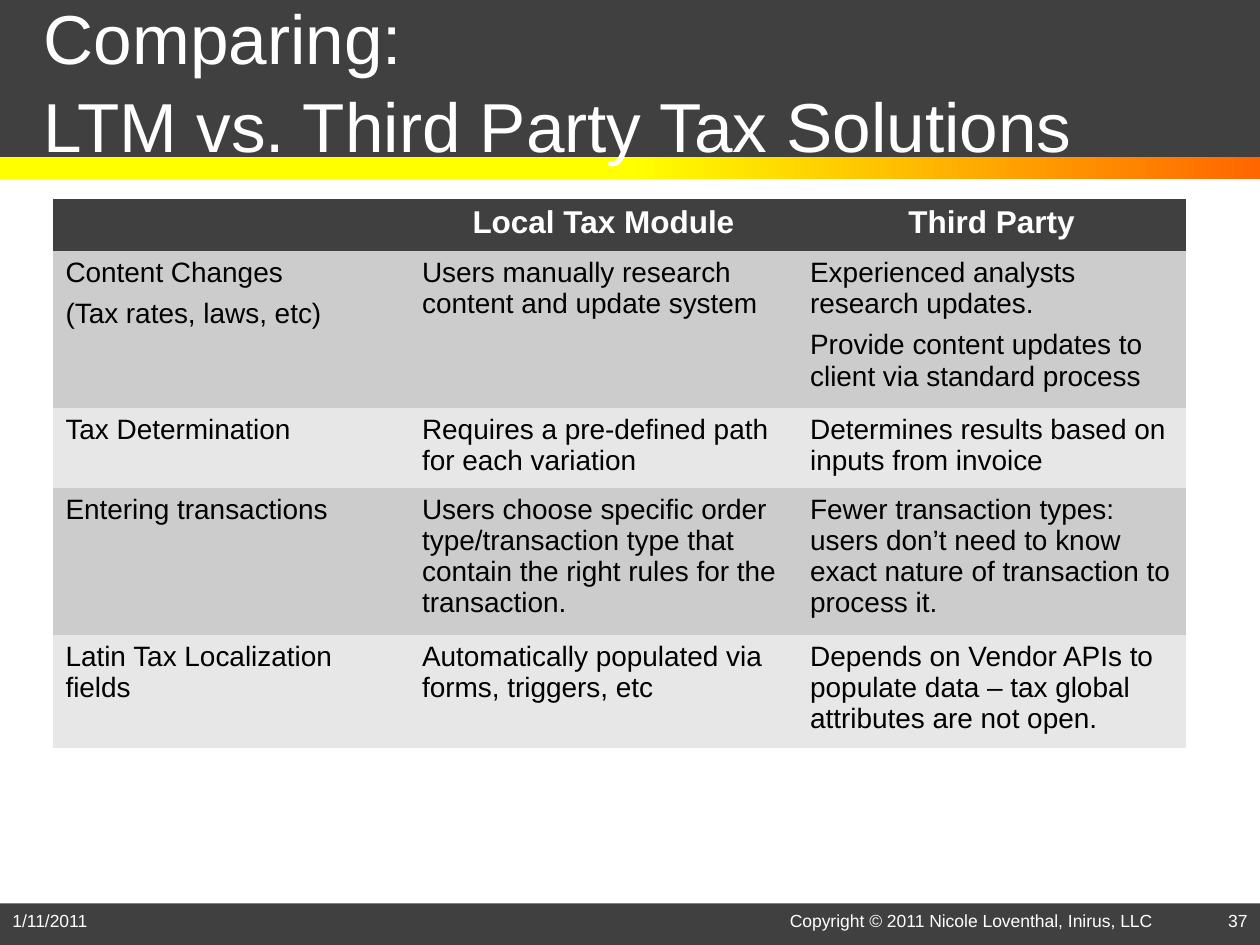
from dataclasses import dataclass

from pptx import Presentation
from pptx.dml.color import RGBColor
from pptx.enum import shapes, text
from pptx.util import Inches, Pt


@dataclass(frozen=True)
class Theme:
    font: str = "Arial"
    dark: RGBColor = RGBColor(0x40, 0x40, 0x40)
    white: RGBColor = RGBColor(0xFF, 0xFF, 0xFF)
    black: RGBColor = RGBColor(0, 0, 0)
    yellow: RGBColor = RGBColor(0xFF, 0xFF, 0)
    orange: RGBColor = RGBColor(0xFF, 0x66, 0)
    bands: tuple = (RGBColor(0xCC, 0xCC, 0xCC), RGBColor(0xE7, 0xE7, 0xE7))
    title_size: float = 39.6
    header_size: float = 18
    body_size: float = 16
    footer_size: float = 10


theme = Theme()
LEFT, CENTER, RIGHT = text.PP_ALIGN.LEFT, text.PP_ALIGN.CENTER, text.PP_ALIGN.RIGHT


def add_bar(top, height):
    """Add a dark, full-width rectangle without outline or shadow."""
    bar = slide.shapes.add_shape(
        shapes.MSO_SHAPE.RECTANGLE, 0, Inches(top), Inches(10), Inches(height))
    bar.shadow.inherit = False
    bar.fill.solid()
    bar.fill.fore_color.rgb = theme.dark
    bar.line.fill.background()
    return bar


def write(text_frame, content, size, color, align=LEFT, bold=False, space_after=0):
    text_frame.word_wrap = True
    text_frame.text = content
    for paragraph in text_frame.paragraphs:
        paragraph.alignment = align
        paragraph.space_after = Pt(space_after)
        for run in paragraph.runs:
            run.font.name = theme.font
            run.font.size = Pt(size)
            run.font.bold = bold
            run.font.color.rgb = color


presentation = Presentation()
presentation.slide_width, presentation.slide_height = Inches(10), Inches(7.5)
slide = presentation.slides.add_slide(presentation.slide_layouts[6])

# Bars
add_bar(0, 1.25)
add_bar(7.17, 0.33)
accent = add_bar(1.25, 0.17)
accent.fill.gradient()
accent.fill.gradient_angle = 0
stops = ((0.5, theme.yellow), (1, theme.orange))
for stop, (position, color) in zip(accent.fill.gradient_stops, stops):
    stop.position = position
    stop.color.rgb = color

# Footer
footer_items = [
    ("1/11/2011", 0, 2.33, LEFT),
    ("Copyright © 2011 Nicole Loventhal, Inirus, LLC", 6.17, 3.33, LEFT),
    ("37", 7.67, 2.33, RIGHT),
]
for content, left, width, align in footer_items:
    footer = slide.shapes.add_textbox(
        Inches(left), Inches(7.17), Inches(width), Inches(0.33))
    write(footer.text_frame, content, theme.footer_size, theme.white, align)

# Title
title = slide.shapes.add_textbox(Inches(0.25), 0, Inches(9), Inches(1.25))
title.text_frame.vertical_anchor = text.MSO_ANCHOR.MIDDLE
write(title.text_frame, "Comparing: \vLTM vs. Third Party Tax Solutions",
      theme.title_size, theme.white)
title.text_frame.paragraphs[0].line_spacing = 1.05

# Comparison table
rows = [
    ("", "Local Tax Module", "Third Party"),
    ("Content Changes\n(Tax rates, laws, etc)",
     "Users manually research content and update system",
     "Experienced analysts research updates.\n"
     "Provide content updates to client via standard process"),
    ("Tax Determination",
     "Requires a pre-defined path for each variation",
     "Determines results based on inputs from invoice"),
    ("Entering transactions",
     "Users choose specific order type/transaction type that contain "
     "the right rules for the transaction.",
     "Fewer transaction types: users don’t need to know exact nature "
     "of transaction to process it."),
    ("Latin Tax Localization fields",
     "Automatically populated via forms, triggers, etc",
     "Depends on Vendor APIs to populate data – tax global attributes are not open."),
]
column_widths = (2.83, 3.08, 3.08)
row_heights = (0.41, 1.17, 0.59, 1.09, 0.84)
table = slide.shapes.add_table(
    len(rows), len(column_widths), Inches(0.42), Inches(1.58),
    Inches(sum(column_widths)), Inches(sum(row_heights))).table
for column, width in zip(table.columns, column_widths):
    column.width = Inches(width)
for row_index, (row, height) in enumerate(zip(rows, row_heights)):
    table.rows[row_index].height = Inches(height)
    is_header = row_index == 0
    is_last = row_index == len(rows) - 1
    for column_index, content in enumerate(row):
        cell = table.cell(row_index, column_index)
        cell.fill.solid()
        cell.fill.fore_color.rgb = (
            theme.dark if is_header else theme.bands[(row_index - 1) % 2])
        write(cell.text_frame, content,
              theme.header_size if is_header else theme.body_size,
              theme.white if is_header else theme.black,
              align=CENTER if is_header else LEFT,
              bold=is_header, space_after=0 if is_last else 6)

# A plain table style without white grid lines
style_id = table._tbl.tblPr.find(
    "{http://schemas.openxmlformats.org/drawingml/2006/main}tableStyleId")
style_id.text = "{2D5ABB26-0587-4C30-8999-92F81FD0307C}"

presentation.save("out.pptx")
